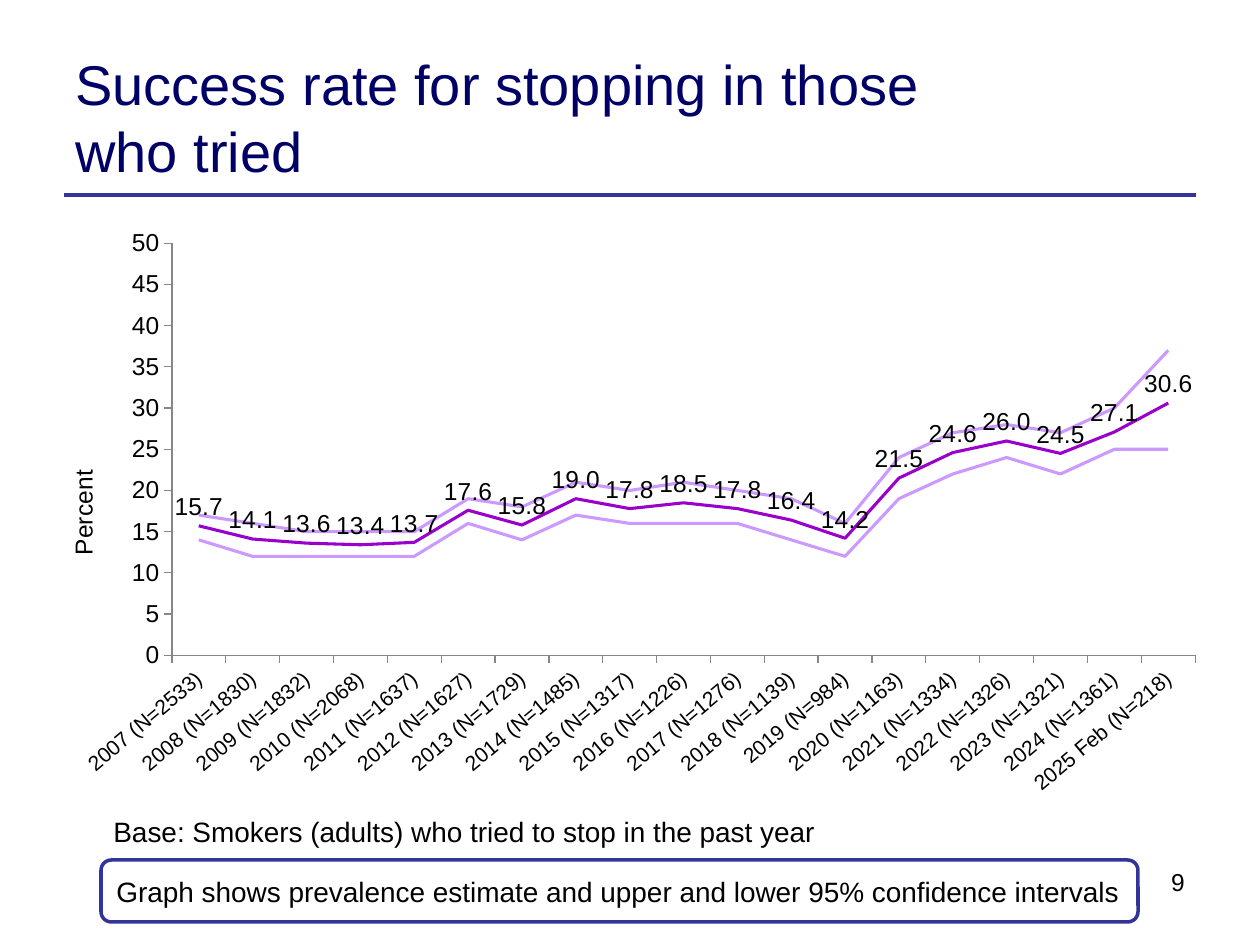
import pptx
import pptx.chart.data
import pptx.dml.color
import pptx.enum.chart
import pptx.enum.shapes
import pptx.enum.text
import pptx.oxml
import pptx.oxml.ns
import pptx.util

EMU_PER_PX = 914400 / 126
FONT = "Arial"
COLORS = {
    "title": "000066",
    "rule": "333399",
    "text": "000000",
    "paper": "FFFFFF",
    "axis": "868686",
    "estimate": "9900CC",
    "interval": "CC99FF",
}
SAMPLE_SIZES = {
    "2007": 2533, "2008": 1830, "2009": 1832, "2010": 2068, "2011": 1637,
    "2012": 1627, "2013": 1729, "2014": 1485, "2015": 1317, "2016": 1226,
    "2017": 1276, "2018": 1139, "2019": 984, "2020": 1163, "2021": 1334,
    "2022": 1326, "2023": 1321, "2024": 1361, "2025 Feb": 218,
}
ESTIMATE = [15.7, 14.1, 13.6, 13.4, 13.7, 17.6, 15.8, 19, 17.8, 18.5,
            17.8, 16.4, 14.2, 21.5, 24.6, 26, 24.5, 27.1, 30.6]
UPPER = [17, 16, 15, 15, 15, 19, 18, 21, 20, 21, 20, 19, 16, 24, 27, 28, 27, 30, 37]
LOWER = [14, 12, 12, 12, 12, 16, 14, 17, 16, 16, 16, 14, 12, 19, 22, 24, 22, 25, 25]


def px(length):
    return pptx.util.Emu(round(length * EMU_PER_PX))


def color(name):
    return pptx.dml.color.RGBColor.from_string(COLORS[name])


def style_line(line, name, width):
    line.color.rgb = color(name)
    line.width = pptx.util.Pt(width)


def style_font(font, size, name="text"):
    font.name = FONT
    font.size = pptx.util.Pt(size)
    font.bold = False
    font.color.rgb = color(name)


def write_text(shape, text, size, name="text", align="LEFT", anchor="TOP", wrap=True):
    frame = shape.text_frame
    frame.word_wrap = wrap
    frame.vertical_anchor = getattr(pptx.enum.text.MSO_ANCHOR, anchor)
    paragraph = frame.paragraphs[0]
    paragraph.alignment = getattr(pptx.enum.text.PP_ALIGN, align)
    run = paragraph.add_run()
    run.text = text
    style_font(run.font, size, name)


def add_text(slide, box, text, size, **text_format):
    shape = slide.shapes.add_textbox(*map(px, box))
    write_text(shape, text, size, **text_format)


def set_layout(element, **fractions):
    """Place a chart part by hand, in fractions of the chart's size."""
    layout = element.find(pptx.oxml.ns.qn("c:layout"))
    if layout is None:
        layout = pptx.oxml.parse_xml(f'<c:layout {pptx.oxml.ns.nsdecls("c")}/>')
        element.insert(0, layout)
    values = {"xMode": "edge", "yMode": "edge", **fractions}
    if "w" in fractions:
        values = {"layoutTarget": "inner", **values}
    parts = "".join(f'<c:{tag} val="{value}"/>' for tag, value in values.items())
    layout.append(pptx.oxml.parse_xml(
        f'<c:manualLayout {pptx.oxml.ns.nsdecls("c")}>{parts}</c:manualLayout>'))


def rotate_text(element, degrees):
    body = next(element.iter(pptx.oxml.ns.qn("a:bodyPr")))
    body.set("rot", str(degrees * 60000))
    body.set("vert", "horz")


def add_heading(slide, box):
    left, top, width, height = box
    add_text(slide, (left, top, 984, height), "Success rate for stopping in those who tried",
             32, name="title", anchor="MIDDLE")
    rule_y = top + height
    rule = slide.shapes.add_connector(
        pptx.enum.shapes.MSO_CONNECTOR.STRAIGHT,
        px(left + 1), px(rule_y), px(left + width), px(rule_y))
    style_line(rule.line, "rule", 2.25)
    rule._element.spPr.append(
        pptx.oxml.parse_xml(f'<a:effectLst {pptx.oxml.ns.nsdecls("a")}/>'))


def style_axes(chart):
    for axis, size in ((chart.category_axis, 12), (chart.value_axis, 14)):
        axis.has_major_gridlines = False
        axis.major_tick_mark = pptx.enum.chart.XL_TICK_MARK.OUTSIDE
        axis.minor_tick_mark = pptx.enum.chart.XL_TICK_MARK.NONE
        style_font(axis.tick_labels.font, size)
        style_line(axis.format.line, "axis", 0.75)
    rotate_text(chart.category_axis._element, -40)

    value_axis = chart.value_axis
    value_axis.minimum_scale = 0
    value_axis.maximum_scale = 50
    value_axis.major_unit = 5
    value_axis.tick_labels.number_format = "General"
    value_axis.tick_labels.number_format_is_linked = False
    title = value_axis.axis_title
    title.text_frame.text = "Percent"
    style_font(title.text_frame.paragraphs[0].runs[0].font, 14)
    rotate_text(title._element, -90)
    set_layout(title._element, x=0, y=0.416)


def add_success_chart(slide, box):
    chart_data = pptx.chart.data.CategoryChartData()
    chart_data.categories = [f"{year} (N={count})" for year, count in SAMPLE_SIZES.items()]
    for number, values in enumerate((ESTIMATE, UPPER, LOWER), 1):
        chart_data.add_series(f"Series {number}", values)
    chart = slide.shapes.add_chart(
        pptx.enum.chart.XL_CHART_TYPE.LINE, *map(px, box), chart_data).chart
    chart.has_legend = False
    chart.has_title = False
    style_font(chart.font, 18)
    set_layout(chart._chartSpace.chart.plotArea, x=0.095, y=0.038, w=0.893, h=0.702)
    style_axes(chart)

    plot = chart.plots[0]
    plot.vary_by_categories = False
    for series, name in zip(plot.series, ("estimate", "interval", "interval")):
        series.smooth = False
        series.marker.style = pptx.enum.chart.XL_MARKER_STYLE.NONE
        style_line(series.format.line, name, 1.75)
    labels = plot.series[0].data_labels
    labels.show_value = True
    labels.position = pptx.enum.chart.XL_LABEL_POSITION.ABOVE
    labels.number_format = "#,##0.0"
    labels.number_format_is_linked = False
    style_font(labels.font, 14)


def add_footer(slide, box):
    left, top, width, height = box
    add_text(slide, (left, top, 737, 47),
             "Base: Smokers (adults) who tried to stop in the past year", 16, wrap=False)
    add_text(slide, (left + width - 349, top + 53, 349, 65), "9", 14, align="RIGHT")
    note = slide.shapes.add_shape(
        pptx.enum.shapes.MSO_SHAPE.ROUNDED_RECTANGLE,
        *map(px, (left, top + 52, 1037, height - 52)))
    note.shadow.inherit = False
    note.fill.solid()
    note.fill.fore_color.rgb = color("paper")
    style_line(note.line, "rule", 2)
    write_text(note, "Graph shows prevalence estimate and upper and lower 95% confidence intervals",
               16, anchor="MIDDLE")


def main():
    presentation = pptx.Presentation()
    presentation.slide_width = px(1260)
    presentation.slide_height = px(945)
    slide = presentation.slides.add_slide(presentation.slide_layouts[6])
    add_heading(slide, (63, 38, 1133, 157))
    add_success_chart(slide, (63, 221, 1146, 587))
    add_footer(slide, (101, 808, 1096, 114))
    presentation.save("out.pptx")


if __name__ == "__main__":
    main()
